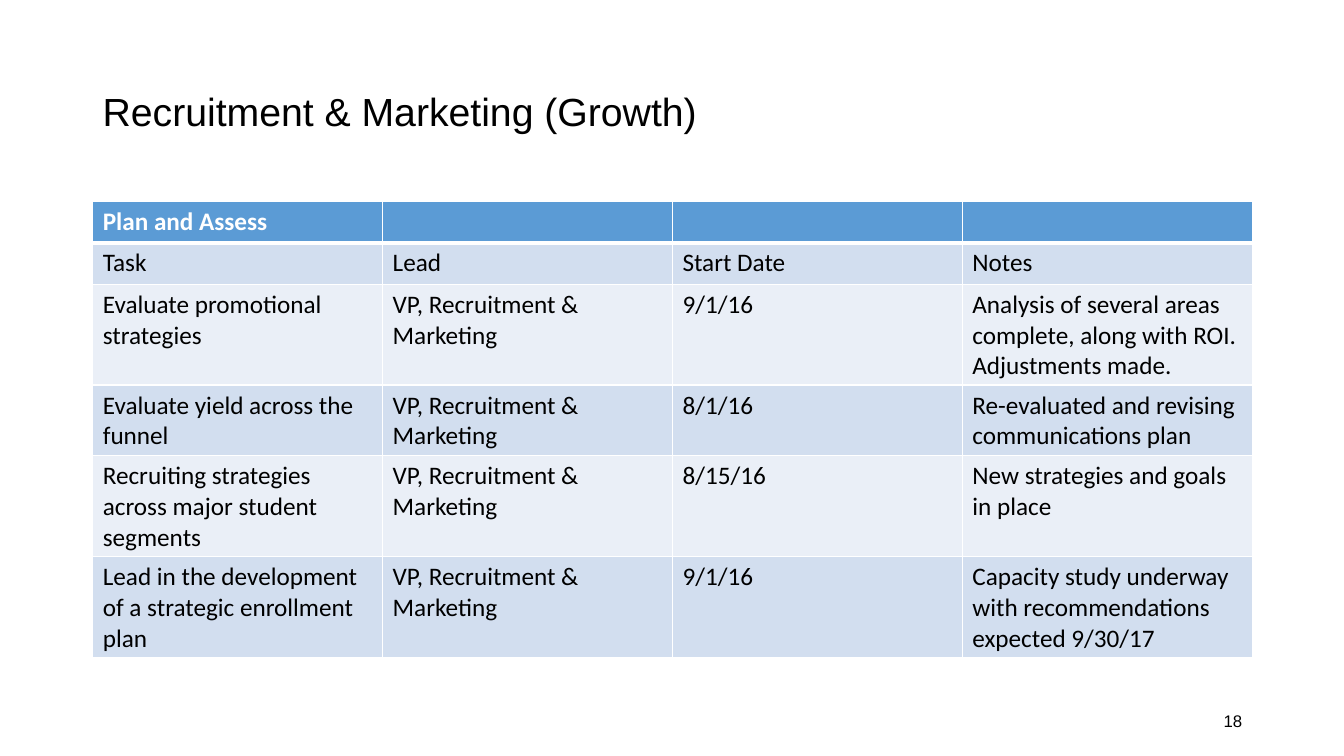
from lxml import etree
from pptx import Presentation
from pptx.dml.color import RGBColor
from pptx.enum.text import MSO_ANCHOR, PP_ALIGN
from pptx.oxml.ns import qn
from pptx.util import Inches, Pt

MIDDLE = MSO_ANCHOR.MIDDLE
LEFT, RIGHT = PP_ALIGN.LEFT, PP_ALIGN.RIGHT

SLIDE_W, SLIDE_H = 13.33, 7.5
MARGIN, CONTENT_W = 0.92, 11.5
ROW_H = 0.41
BLACK, WHITE, HEADER = "000000", "FFFFFF", "5B9BD5"
BANDS = ("D2DEEF", "EAEFF7")
LEAD = "VP, Recruitment & Marketing"
PLAN = [
    ("Plan and Assess", "", "", ""),
    ("Task", "Lead", "Start Date", "Notes"),
    ("Evaluate promotional strategies", LEAD, "9/1/16",
     "Analysis of several areas complete, along with ROI. Adjustments made."),
    ("Evaluate yield across the funnel", LEAD, "8/1/16",
     "Re-evaluated and revising communications plan"),
    ("Recruiting strategies across major student segments", LEAD, "8/15/16",
     "New strategies and goals in place"),
    ("Lead in the development of a strategic enrollment plan", LEAD, "9/1/16",
     "Capacity study underway with recommendations expected 9/30/17"),
]


def rgb(value):
    return RGBColor.from_string(value)


def write(tf, text, size=18, font="Calibri", color=BLACK, bold=False,
          align=LEFT, spacing=None):
    tf.word_wrap = True
    p = tf.paragraphs[0]
    p.alignment = align
    if spacing:
        p.line_spacing = spacing
    if text:
        r = p.add_run()
        r.text = text
        r.font.size, r.font.name, r.font.bold = Pt(size), font, bold
        r.font.color.rgb = rgb(color)


def add_text(slide, box, text, **fmt):
    tf = slide.shapes.add_textbox(*map(Inches, box)).text_frame
    tf.vertical_anchor = MIDDLE
    write(tf, text, **fmt)


def set_borders(cell, color, **widths):
    """Draw cell edges; widths maps L, R, T and B, in that order, to points."""
    tc_pr = cell._tc.get_or_add_tcPr()
    for i, (edge, width) in enumerate(widths.items()):
        ln = etree.Element(qn(f"a:ln{edge}"), w=str(Pt(width)))
        fill = etree.SubElement(ln, qn("a:solidFill"))
        etree.SubElement(fill, qn("a:srgbClr"), val=color)
        tc_pr.insert(i, ln)


def add_plan_table(slide, box, rows):
    n_rows, n_cols = len(rows), len(rows[0])
    table = slide.shapes.add_table(n_rows, n_cols, *map(Inches, box)).table
    for i, row in enumerate(rows):
        is_header = i == 0
        for j, text in enumerate(row):
            cell = table.cell(i, j)
            cell.fill.solid()
            cell.fill.fore_color.rgb = rgb(HEADER if is_header else BANDS[(i - 1) % 2])
            set_borders(cell, WHITE, L=1, R=1, T=3 if i == 1 else 1,
                        B=3 if is_header else 1)
            write(cell.text_frame, text, bold=is_header,
                  color=WHITE if is_header else BLACK)


def build_plan_slide(prs, title, rows, number):
    slide = prs.slides.add_slide(prs.slide_layouts[6])
    add_text(slide, (MARGIN, 0.4, CONTENT_W, 1.45), title,
             size=28, font="Arial", spacing=0.9)
    add_plan_table(slide, (MARGIN, 2, CONTENT_W, ROW_H * len(rows)), rows)
    number_w = 3
    add_text(slide, (MARGIN + CONTENT_W - number_w, 6.95, number_w, 0.4), number,
             size=12, font="Arial", align=RIGHT)


def main():
    prs = Presentation()
    prs.slide_width, prs.slide_height = Inches(SLIDE_W), Inches(SLIDE_H)
    build_plan_slide(prs, "Recruitment & Marketing (Growth)", PLAN, "18")
    prs.save("out.pptx")


if __name__ == "__main__":
    main()
